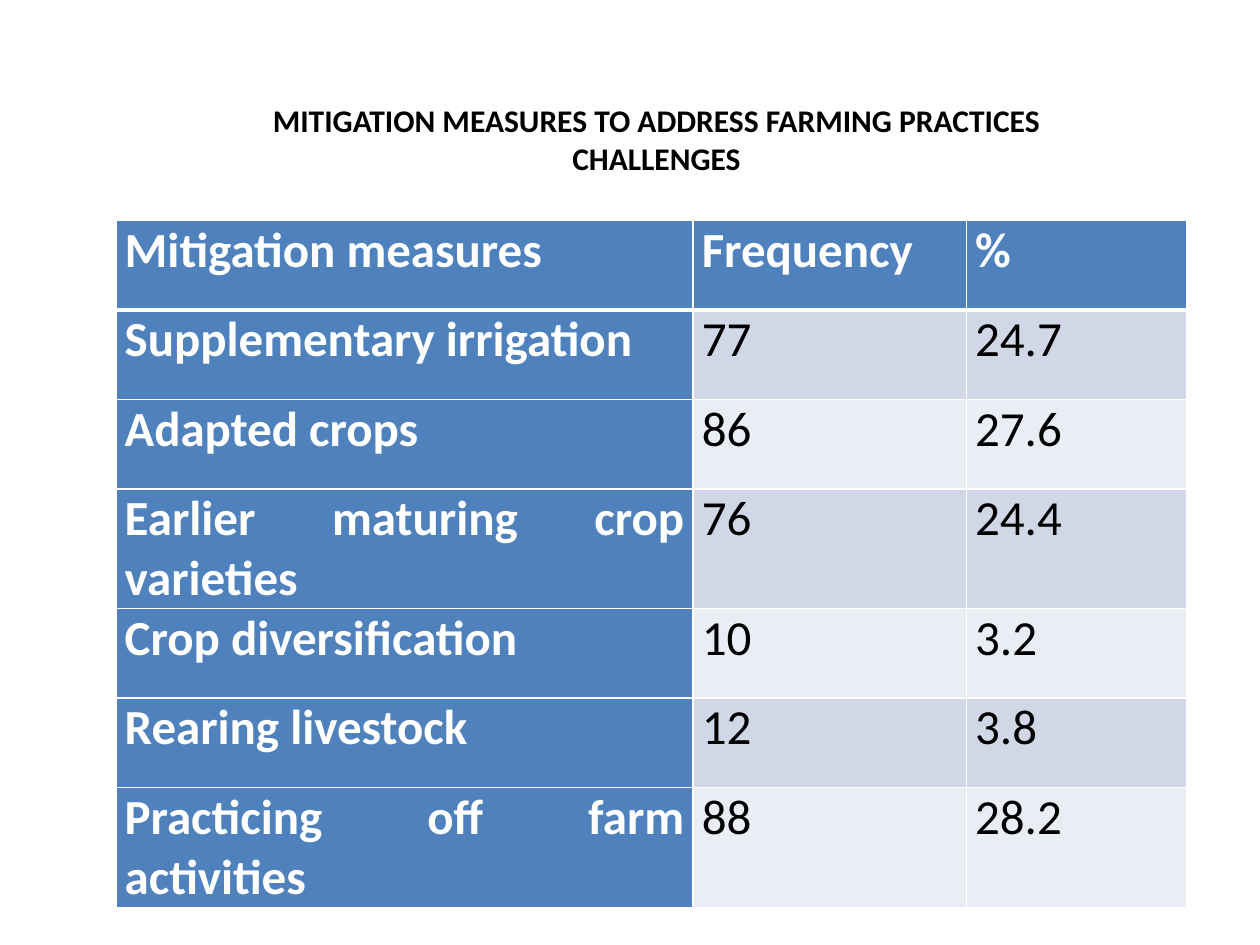
from lxml.etree import SubElement
from pptx import Presentation
from pptx.dml.color import RGBColor
from pptx.enum.text import PP_ALIGN
from pptx.oxml.ns import qn
from pptx.util import Inches, Pt

COLORS = {
    "white": "FFFFFF",
    "black": "000000",
    "heading": "4F81BD",
    "odd": "D0D8E8",
    "even": "E9EDF4",
}
TITLE = "MITIGATION MEASURES TO ADDRESS FARMING PRACTICES CHALLENGES"
ROWS = [
    ("Mitigation measures", "Frequency", "%"),
    ("Supplementary irrigation", "77", "24.7"),
    ("Adapted crops", "86", "27.6"),
    ("Earlier maturing crop varieties", "76", "24.4"),
    ("Crop diversification", "10", "3.2"),
    ("Rearing livestock", "12", "3.8"),
    ("Practicing off farm activities", "88", "28.2"),
]
COLUMN_WIDTHS = [4.58, 2.17, 1.75]
ROW_HEIGHT = 0.71
CELL_MARGINS = {
    "margin_left": Inches(0.07),
    "margin_right": Inches(0.07),
    "margin_top": 0,
    "margin_bottom": 0,
}


def write(frame, text, size, color, bold, alignment):
    paragraph = frame.paragraphs[0]
    paragraph.alignment = alignment
    run = paragraph.add_run()
    run.text = text
    font_format = {"name": "Calibri", "size": Pt(size), "bold": bold}
    for name, value in font_format.items():
        setattr(run.font, name, value)
    run.font.color.rgb = RGBColor.from_string(COLORS[color])


def add_borders(cell, widths):
    """Draw white cell borders; call before the fill, which must follow them in the XML."""
    properties = cell._tc.get_or_add_tcPr()
    for side, width in widths.items():
        line = SubElement(properties, qn(f"a:ln{side}"), w=str(Pt(width)))
        fill = SubElement(line, qn("a:solidFill"))
        SubElement(fill, qn("a:srgbClr"), val=COLORS["white"])


def add_title(slide):
    box = slide.shapes.add_textbox(Inches(1.67), Inches(0.75), Inches(7.08), Inches(0.71))
    box.text_frame.word_wrap = True
    write(box.text_frame, TITLE, 18, "black", True, PP_ALIGN.CENTER)


def add_measures_table(slide):
    table = slide.shapes.add_table(
        len(ROWS), len(COLUMN_WIDTHS), Inches(0.92), Inches(1.75),
        Inches(sum(COLUMN_WIDTHS)), Inches(ROW_HEIGHT * len(ROWS)),
    ).table
    table.first_col = True
    for column, width in zip(table.columns, COLUMN_WIDTHS):
        column.width = Inches(width)
    for r, values in enumerate(ROWS):
        table.rows[r].height = Inches(ROW_HEIGHT)
        for c, value in enumerate(values):
            cell = table.cell(r, c)
            for name, margin in CELL_MARGINS.items():
                setattr(cell, name, margin)
            is_heading = r == 0 or c == 0
            add_borders(cell, {"L": 1, "R": 1, "T": 3 if r == 1 else 1, "B": 3 if r == 0 else 1})
            fill = "heading" if is_heading else "odd" if r % 2 else "even"
            cell.fill.solid()
            cell.fill.fore_color.rgb = RGBColor.from_string(COLORS[fill])
            color = "white" if is_heading else "black"
            write(cell.text_frame, value, 28, color, is_heading, PP_ALIGN.JUSTIFY)


def main():
    presentation = Presentation()
    presentation.slide_width = Inches(10)
    presentation.slide_height = Inches(7.5)
    slide = presentation.slides.add_slide(presentation.slide_layouts[6])
    add_measures_table(slide)
    add_title(slide)
    presentation.save("out.pptx")


if __name__ == "__main__":
    main()
